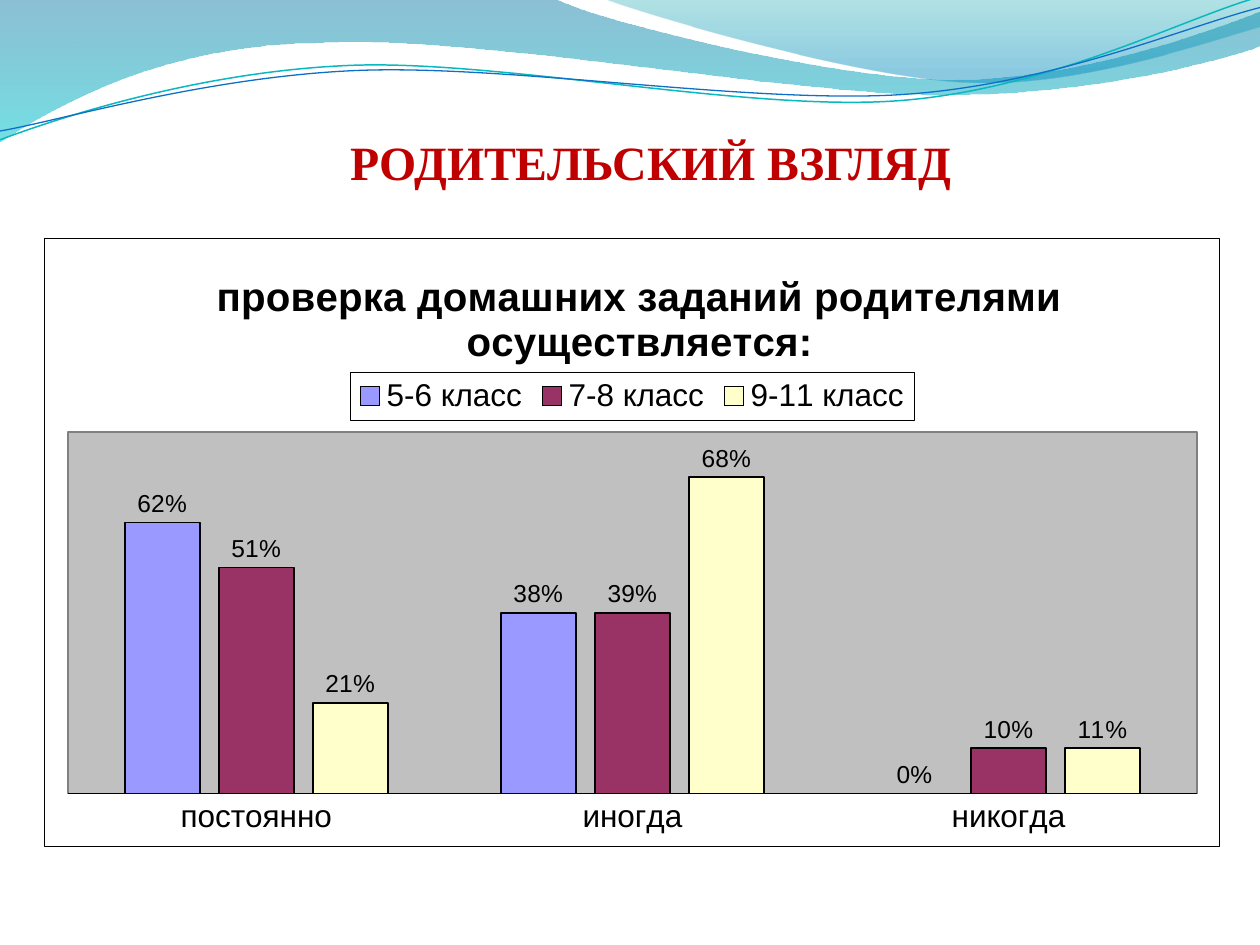
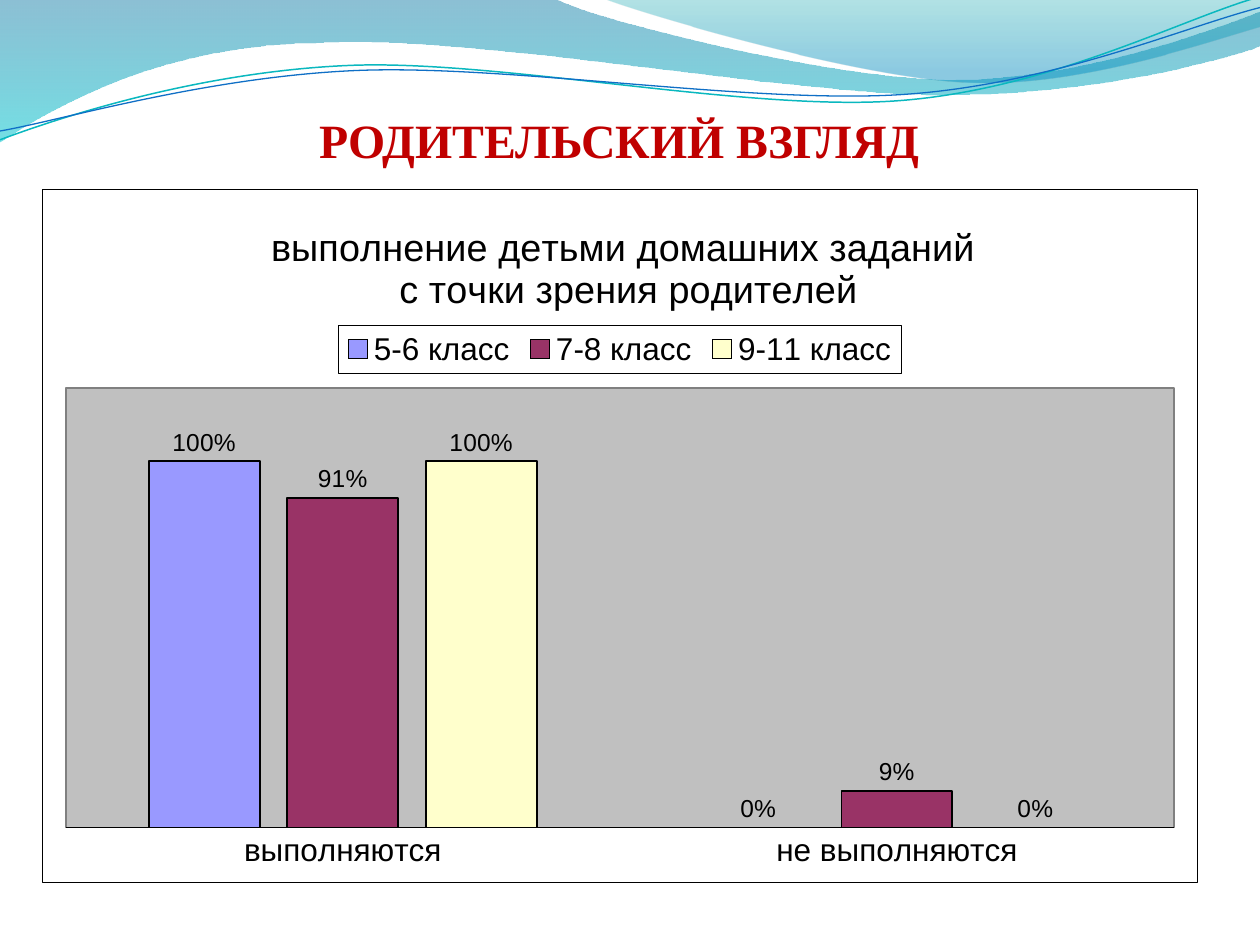
from dataclasses import dataclass

from lxml import etree
from pptx import Presentation
from pptx import util as u
from pptx.chart.data import CategoryChartData
from pptx.dml.color import RGBColor
from pptx.enum import chart as charts, text
from pptx.oxml import parse_xml
from pptx.oxml.ns import nsdecls, qn

PX = 9144  # EMU per px, 100 px to the inch


@dataclass(frozen=True)
class Theme:
    heading: str = "C00000"
    ink: str = "000000"
    paper: str = "FFFFFF"
    plot: str = "C0C0C0"
    plot_edge: str = "808080"
    series: tuple = ("9999FF", "993366", "FFFFCC")
    heading_font: str = "Times New Roman"
    chart_font: str = "Arial"
    heading_size: float = 27.3
    chart_size: int = 18
    label_size: int = 14
    hairline: float = 0.25


THEME = Theme()
CLASSES = ("5-6 класс", "7-8 класс", "9-11 класс")
HEADING = "РОДИТЕЛЬСКИЙ ВЗГЛЯД"

# Wave outlines: a start point, then lines (2 numbers) and curves (6 numbers)
BANDS = (
    (((0, -1), (440, -1), (476, 17, 664, 63, 758, 63), (853, 63, 958, 26, 1000, 9),
      (1001, 36), (983, 44, 870, 76, 746, 75), (622, 75, 382, 28, 257, 34),
      (129, 35, 46, 83, -1, 113)),
     ((0, "0074A1", 45), (1, "00C6CF", 55))),
    (((479, -1), (509, 11, 682, 62, 769, 65), (856, 69, 961, 32, 1000, 21), (1000, 0)),
     ((0, "00A1A9", 30), (0.8, "008BBF", 45))),
)
STRANDS = (
    (((0, 111), (48, 93, 158, 57, 277, 52), (395, 47, 593, 89, 713, 80),
      (833, 71, 938, 15, 998, -2)), "0AB8BF", 0.85),
    (((0, 104), (47, 96, 164, 61, 283, 56), (403, 51, 597, 83, 717, 75),
      (836, 67, 941, 21, 1000, 6)), "0F6FC6", 0.75),
)


def px(*lengths):
    return [round(length * PX) for length in lengths]


def rgb(value):
    return RGBColor.from_string(value)


def apply(target, values):
    for name, value in values.items():
        setattr(target, name, value)


def set_font(font, size, color=THEME.ink, name=THEME.chart_font, bold=False):
    apply(font, {"size": u.Pt(size), "name": name, "bold": bold})
    font.color.rgb = rgb(color)


def set_line(line, color, width):
    line.color.rgb = rgb(color)
    line.width = u.Pt(width)


# Waves
def add_outline(page, outline, close):
    """Draw lines through all points, then bend each curve's three lines into one."""
    start, *parts = outline
    points = [px(*part[i:i + 2]) for part in parts for i in range(0, len(part), 2)]
    builder = page.shapes.build_freeform(*px(*start))
    builder.add_line_segments(points, close=close)
    shape = builder.convert_to_shape()
    shape.shadow.inherit = False
    lines = iter(list(shape.element.iter(qn("a:lnTo"))))
    for part in parts:
        group = [next(lines) for _ in range(len(part) // 2)]
        if len(group) == 3:
            curve = etree.Element(qn("a:cubicBezTo"))
            group[0].addprevious(curve)
            for line in group:
                curve.append(line[0])
                line.getparent().remove(line)
    return shape


def add_band(page, outline, stops):
    shape = add_outline(page, outline, close=True)
    shape.fill.gradient()
    shape.fill.gradient_angle = 270
    for stop, (position, color, _) in zip(shape.fill.gradient_stops, stops):
        stop.color.rgb = rgb(color)
        stop.position = position
    for color, (_, _, opacity) in zip(shape.element.iter(qn("a:srgbClr")), stops):
        etree.SubElement(color, qn("a:alpha"), val=str(opacity * 1000))
    shape.line.fill.background()
    return shape


def add_strand(page, outline, color, width):
    shape = add_outline(page, outline, close=False)
    shape.fill.background()
    set_line(shape.line, color, width)
    return shape


def add_waves(page):
    """Draw the waves and hand them to the layout that all pages share."""
    waves = [add_band(page, *band) for band in BANDS]
    waves += [add_strand(page, *strand) for strand in STRANDS]
    for wave in waves:
        page.slide_layout.shapes.element.append(wave.element)


# Title
def set_title(page, left, top):
    title = page.shapes.title
    apply(title, dict(zip(("left", "top", "width", "height"), px(left, top, 933, 142))))
    frame = title.text_frame
    apply(frame, {
        "text": HEADING, "word_wrap": True, "auto_size": text.MSO_AUTO_SIZE.NONE,
        "vertical_anchor": text.MSO_ANCHOR.TOP, "margin_left": 0, "margin_right": 0,
        "margin_top": px(5)[0], "margin_bottom": 0,
    })
    para = frame.paragraphs[0]
    para.alignment = text.PP_ALIGN.CENTER
    set_font(para.runs[0].font, THEME.heading_size, THEME.heading, THEME.heading_font, True)


# Chart
def area_format(fill, edge, width):
    return parse_xml(
        f'<c:spPr {nsdecls("c", "a")}>'
        f'<a:solidFill><a:srgbClr val="{fill}"/></a:solidFill>'
        f'<a:ln w="{u.Pt(width)}"><a:solidFill><a:srgbClr val="{edge}"/></a:solidFill></a:ln>'
        '</c:spPr>')


def place(part, box, spot, target=""):
    """Put a chart part at a spot given in px from the chart's corner."""
    for layout in part.findall(qn("c:layout")):
        part.remove(layout)
    values = zip("xywh", spot, box[2:] * 2)
    places = "".join(f'<c:{key} val="{length / whole:.4f}"/>' for key, length, whole in values)
    layout = parse_xml(
        f'<c:layout {nsdecls("c")}><c:manualLayout>{target}<c:xMode val="edge"/>'
        f'<c:yMode val="edge"/>{places}</c:manualLayout></c:layout>')
    overlay = part.find(qn("c:overlay"))
    if overlay is None:
        part.insert(0, layout)
    else:
        overlay.addprevious(layout)


def format_areas(chart, box, title_at, legend_at, plot_at):
    body = chart.element.find(qn("c:chart"))
    title, legend, plot = (body.find(qn(f"c:{tag}")) for tag in ("title", "legend", "plotArea"))
    place(title, box, title_at)
    place(legend, box, legend_at)
    place(plot, box, plot_at, '<c:layoutTarget val="inner"/>')
    plot.append(area_format(THEME.plot, THEME.plot_edge, 1))
    frame = (THEME.paper, THEME.ink, THEME.hairline)
    body.addnext(area_format(*frame))
    legend.find(qn("c:overlay")).addnext(area_format(*frame))


def format_axes(chart):
    apply(chart.value_axis, {"visible": False, "has_major_gridlines": False})
    axis = chart.category_axis
    apply(axis, {"major_tick_mark": charts.XL_TICK_MARK.NONE, "has_major_gridlines": False})
    set_line(axis.format.line, THEME.ink, THEME.hairline)


def format_series(series, color, labels):
    series.invert_if_negative = False
    series.format.fill.solid()
    series.format.fill.fore_color.rgb = rgb(color)
    set_line(series.format.line, THEME.ink, 1)
    outside = charts.XL_LABEL_POSITION.OUTSIDE_END
    apply(series.data_labels, {"show_value": True, "position": outside})
    set_font(series.data_labels.font, THEME.label_size)
    for index, wording in enumerate(labels):
        label = series.points[index].data_label
        label.text_frame.text = wording
        set_font(label.text_frame.paragraphs[0].runs[0].font, THEME.label_size)
        label.position = outside


def add_survey_chart(page, box, title, title_size, bold, categories, values, labels, **spots):
    data = CategoryChartData()
    data.categories = categories
    for name, row in zip(CLASSES, values):
        data.add_series(name, row)
    chart = page.shapes.add_chart(charts.XL_CHART_TYPE.COLUMN_CLUSTERED, *px(*box), data).chart
    set_font(chart.font, THEME.chart_size)

    apply(chart, {"has_title": True, "has_legend": True})
    chart.chart_title.text_frame.text = title
    for para in chart.chart_title.text_frame.paragraphs:
        for span in para.runs:
            set_font(span.font, title_size, bold=bold)
    apply(chart.legend, {"position": charts.XL_LEGEND_POSITION.TOP,
                         "include_in_layout": False})
    set_font(chart.legend.font, THEME.chart_size)

    apply(chart.plots[0], {"gap_width": 150, "overlap": -25, "vary_by_categories": False})
    for series, color, wordings in zip(chart.plots[0].series, THEME.series, labels):
        format_series(series, color, wordings)
    format_axes(chart)
    format_areas(chart, box, **spots)


def main():
    deck = Presentation()
    deck.slide_width, deck.slide_height = px(1000, 750)
    title_only = deck.slide_layouts[5]

    # Parents checking homework
    page = deck.slides.add_slide(title_only)
    add_waves(page)
    set_title(page, 50, 100)
    add_survey_chart(
        page, (35, 189, 933, 483), "проверка домашних заданий родителями осуществляется:",
        title_size=23, bold=True, categories=("постоянно", "иногда", "никогда"),
        values=((60, 40, 0), (50, 40, 10), (20, 70, 10)),
        labels=(("62%", "38%", "0%"), ("51%", "39%", "10%"), ("21%", "68%", "11%")),
        title_at=(131, 19), legend_at=(243, 106), plot_at=(19, 154, 896, 287))

    # Children doing homework
    page = deck.slides.add_slide(title_only)
    set_title(page, 25, 83)
    add_survey_chart(
        page, (33, 150, 917, 550), "выполнение детьми домашних заданий\n с точки зрения родителей",
        title_size=21.6, bold=False, categories=("выполняются", "не выполняются"),
        values=((100, 0), (90, 10), (100, 0)),
        labels=(("100%", "0%"), ("91%", "9%"), ("100%", "0%")),
        title_at=(179, 25), legend_at=(235, 108), plot_at=(19, 158, 880, 349))

    deck.save("out.pptx")


if __name__ == "__main__":
    main()
